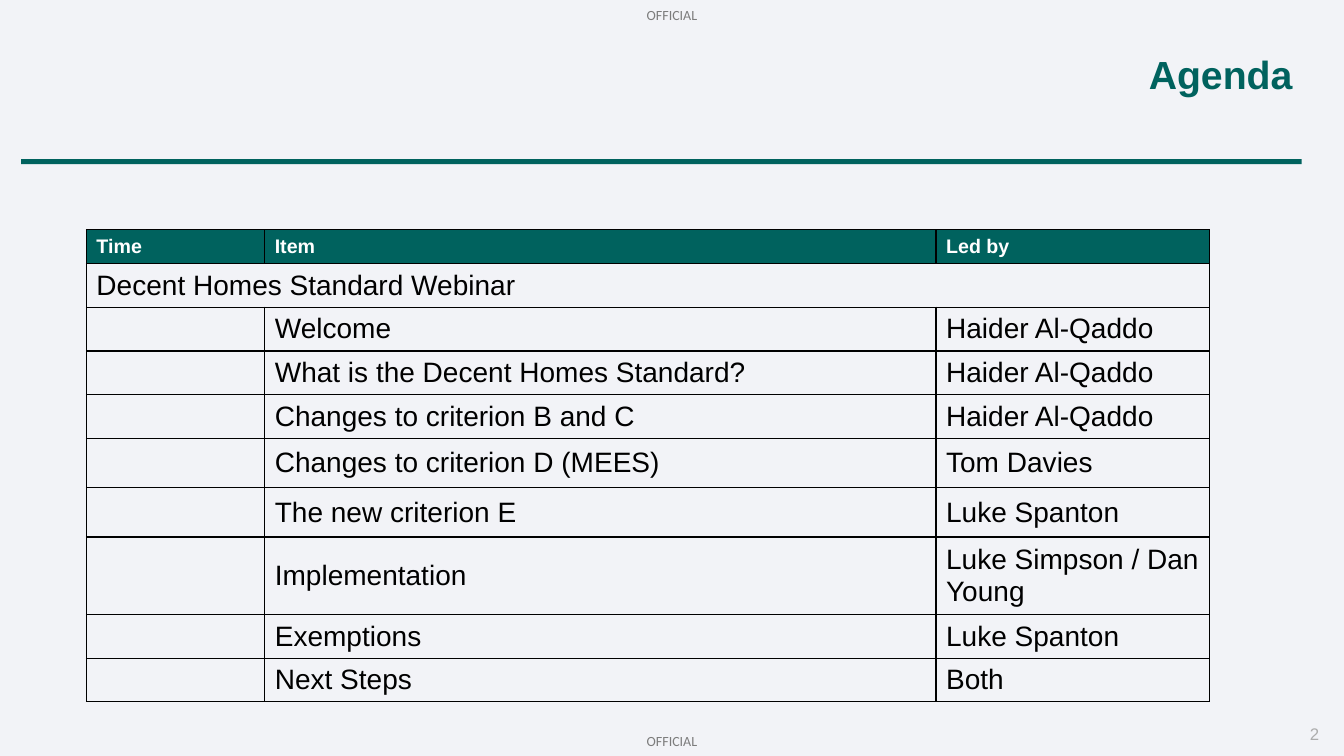
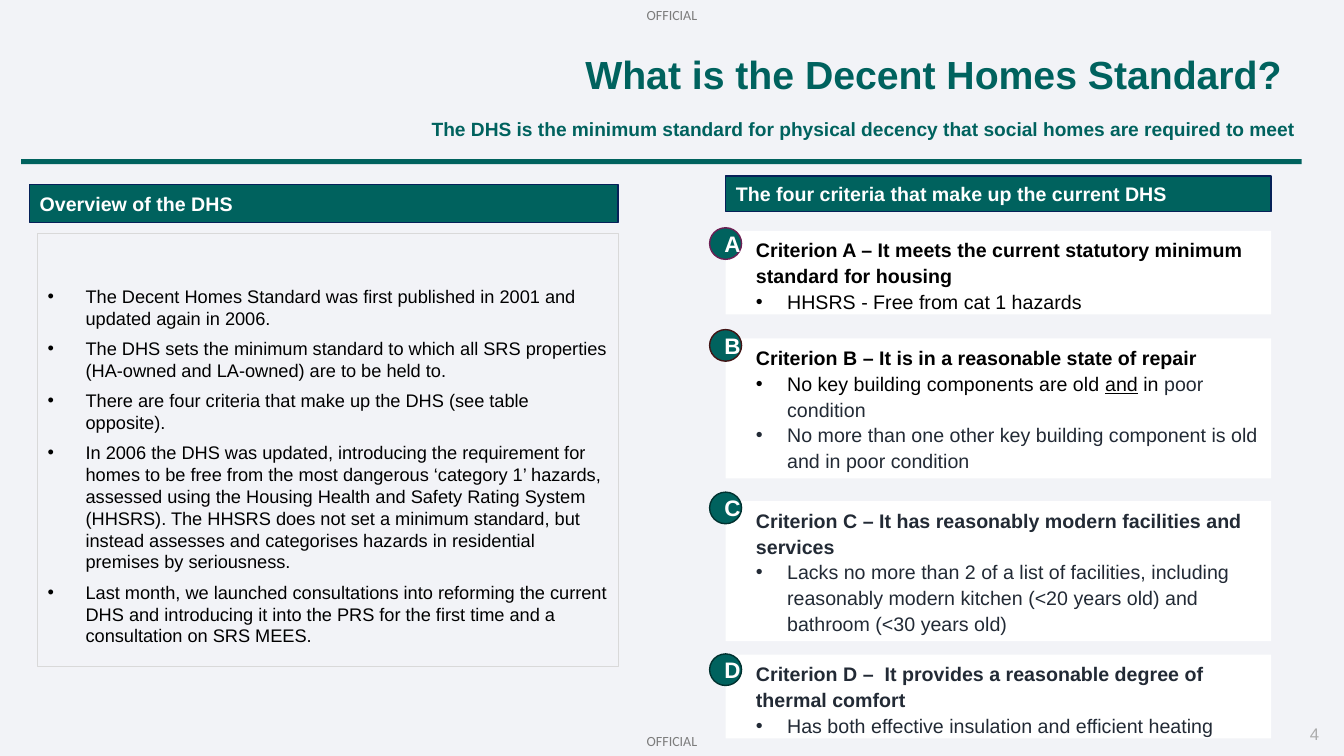
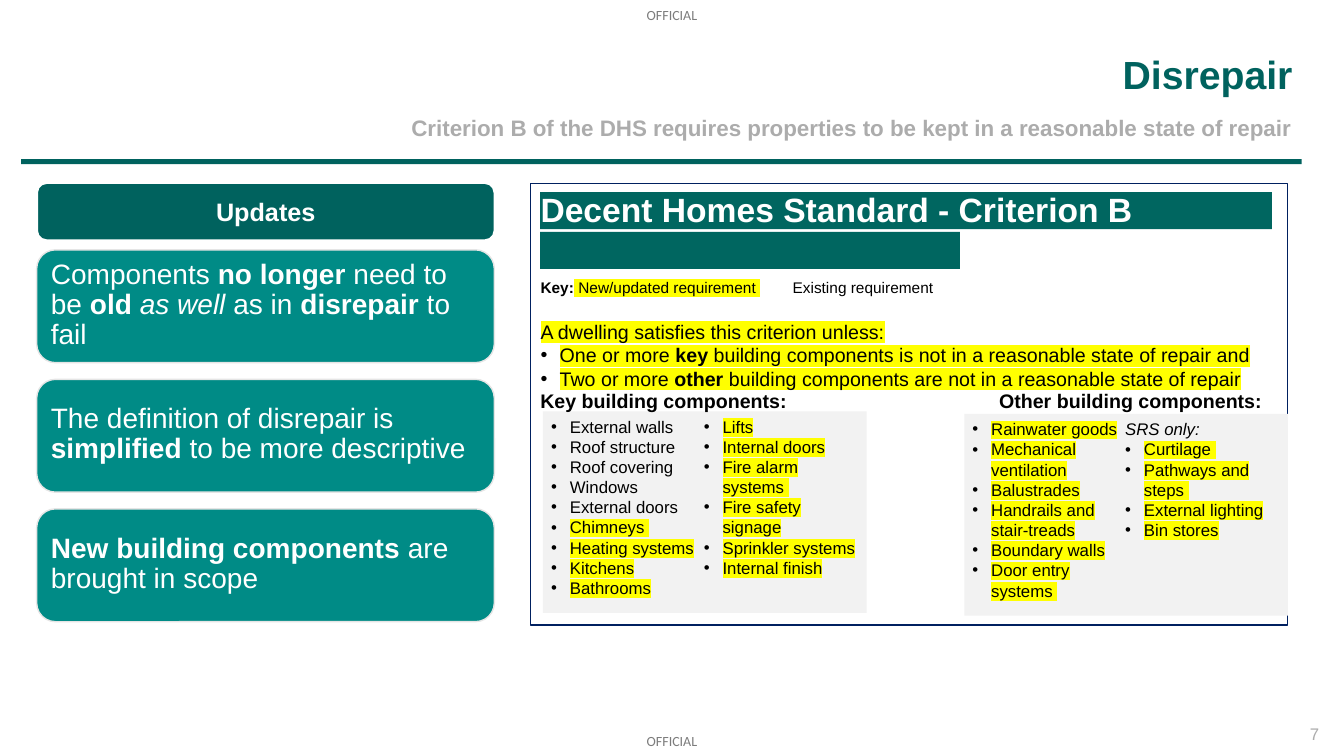
"""Build three slides on the Decent Homes Standard."""
import pptx
import pptx.util
import pptx.dml.color
import pptx.enum.shapes
import pptx.enum.text
import pptx.oxml.ns
import lxml.etree

rgb = pptx.dml.color.RGBColor.from_string
Pt = pptx.util.Pt
tag = pptx.oxml.ns.qn
sub = lxml.etree.SubElement
form = pptx.enum.shapes.MSO_SHAPE
side = pptx.enum.text.PP_ALIGN
hold = pptx.enum.text.MSO_ANCHOR

teal, sea, navy = "00625E", "008B86", "062158"
white, black, slate, gray, mark = "FFFFFF", "000000", "222A35", "ACACAC", "FFFF00"

deck = pptx.Presentation()
deck.slide_width = pptx.util.Inches(13.33)
deck.slide_height = pptx.util.Inches(7.5)
col, row = deck.slide_width / 100, deck.slide_height / 100


def box(page, area, kind=None, fill=None, line=None, inset=(0.75, 0.67), anchor=hold.TOP, wide=1):
    """Place a shape or text box by columns and rows, and return its text frame."""
    x, y, w, h = area
    place = [int(n) for n in (x * col, y * row, w * col, h * row)]
    if kind is None:
        shape = page.shapes.add_textbox(*place)
    else:
        shape = page.shapes.add_shape(kind, *place)
        shape.shadow.inherit = False
    if fill:
        shape.fill.solid()
        shape.fill.fore_color.rgb = rgb(fill)
    else:
        shape.fill.background()
    if line:
        shape.line.color.rgb = rgb(line)
        shape.line.width = Pt(wide)
    else:
        shape.line.fill.background()
    frame = shape.text_frame
    frame.word_wrap = True
    frame.vertical_anchor = anchor
    frame.margin_left = frame.margin_right = int(inset[0] * col)
    frame.margin_top = int(inset[1] * row)
    frame.margin_bottom = int(min(inset[1], 0.67) * row)
    return frame


def write(frame, paras, size, hue=black, align=side.LEFT, lead=1, after=0, face="Arial", tab=None):
    """Add paragraphs of (indent, hang, runs); run marks are b, i, u and h."""
    for left, hang, runs in paras:
        para = frame.paragraphs[0]
        if para.runs:
            para = frame.add_paragraph()
        prop = para._p.get_or_add_pPr()
        prop.set("marL", str(int(left * col)))
        prop.set("indent", str(int(-hang * col)))
        if hang:
            sub(prop, tag("a:buFont")).set("typeface", "Arial")
            sub(prop, tag("a:buChar")).set("char", "•")
        else:
            sub(prop, tag("a:buNone"))
        if tab:
            stop = sub(sub(prop, tag("a:tabLst")), tag("a:tab"))
            stop.set("pos", str(int(tab * col)))
            stop.set("algn", "l")
        para.alignment = align
        para.line_spacing = lead
        para.space_before = Pt(0)
        para.space_after = Pt(after)
        for text, marks, *tint in runs:
            run = para.add_run()
            run.text = text
            font = run.font
            font.size = Pt(size)
            font.bold = "b" in marks
            font.italic = "i" in marks
            font.underline = "u" in marks
            font.color.rgb = rgb(tint[0] if tint else hue)
            if "h" in marks:
                glow = sub(run._r.get_or_add_rPr(), tag("a:highlight"))
                sub(glow, tag("a:srgbClr")).set("val", mark)
            font.name = face


pages = []
for name, num, back in [
    ("Agenda", "2", "F2F3F7"),
    ("What is the Decent Homes Standard? ", "4", "F2F3F7"),
    ("Disrepair", "7", white),
]:
    page = deck.slides.add_slide(deck.slide_layouts[5])
    page.background.fill.solid()
    page.background.fill.fore_color.rgb = rgb(back)
    for y in (0.93, 96.87):
        label = box(page, (48.12, y, 4.5, 2.27), inset=(0, 0))
        write(label, [(0, 0, [("OFFICIAL", "")])], 10, "7C7C7C", face="Calibri")
    box(page, (1.57, 21.05, 95.28, 0.67), form.RECTANGLE, teal)
    label = box(page, (93.5, 95.73, 4.65, 2.67), inset=(0, 0), anchor=hold.MIDDLE)
    write(label, [(0, 0, [(num, "")])], 12, gray, side.RIGHT)
    title = page.shapes.title
    title.left, title.top = int(33.68 * col), int(7.33 * row)
    title.width, title.height = int(62.48 * col), int(5.6 * row)
    frame = title.text_frame
    frame.margin_left = frame.margin_right = frame.margin_top = frame.margin_bottom = 0
    frame.vertical_anchor = hold.BOTTOM
    frame.word_wrap = True
    frame.auto_size = pptx.enum.text.MSO_AUTO_SIZE.NONE
    write(frame, [(0, 0, [(name, "b")])], 28, teal, side.RIGHT, 0.9)
    pages.append(page)
first, second, third = pages

items = [
    ("Time", "Item", "Led by"),
    ("Decent Homes Standard Webinar", "", ""),
    ("", "Welcome", "Haider Al-Qaddo"),
    ("", "What is the Decent Homes Standard?", "Haider Al-Qaddo"),
    ("", "Changes to criterion B and C", "Haider Al-Qaddo"),
    ("", "Changes to criterion D (MEES)", "Tom Davies"),
    ("", "The new criterion E", "Luke Spanton"),
    ("", "Implementation", "Luke Simpson / Dan Young"),
    ("", "Exemptions", "Luke Spanton"),
    ("", "Next Steps", "Both"),
]
highs = [4.45, 5.73, 5.73, 5.73, 5.73, 6.53, 6.53, 10.13, 5.73, 5.73]
wides = [13.27, 49.95, 20.33]
grid = first.shapes.add_table(
    len(items), 3, int(6.43 * col), int(30.4 * row), int(sum(wides) * col), int(sum(highs) * row)
).table
for c, wide in enumerate(wides):
    grid.columns[c].width = int(wide * col)
for r, texts in enumerate(items):
    grid.rows[r].height = int(highs[r] * row)
    for c, text in enumerate(texts):
        cell = grid.cell(r, c)
        cell.vertical_anchor = hold.MIDDLE
        prop = cell._tc.get_or_add_tcPr()
        for edge in ("a:lnL", "a:lnR", "a:lnT", "a:lnB"):
            rule = sub(prop, tag(edge))
            rule.set("w", str(Pt(1)))
            sub(sub(rule, tag("a:solidFill")), tag("a:srgbClr")).set("val", black)
        if r == 0:
            cell.fill.solid()
            cell.fill.fore_color.rgb = rgb(teal)
        else:
            cell.fill.background()
        if text:
            size, hue, marks = (14, white, "b") if r == 0 else (20, black, "")
            write(cell.text_frame, [(0, 0, [(text, marks)])], size, hue)
grid.cell(1, 0).merge(grid.cell(1, 2))

lead = box(second, (20, 14.93, 76.75, 3.73), inset=(0, 0), anchor=hold.BOTTOM)
line = "The DHS is the minimum standard for physical decency that social homes are required to meet "
write(lead, [(0, 0, [(line, "b")])], 13.7, teal, side.RIGHT, 0.9)
for area, text in [
    ((2.2, 24.4, 43.8, 5.07), "Overview of the DHS"),
    ((54, 23.3, 40.58, 4.67), "The four criteria that make up the current DHS"),
]:
    head = box(second, area, form.RECTANGLE, teal, navy, anchor=hold.MIDDLE)
    write(head, [(0, 0, [(text, "b")])], 14, white)
facts = [
    "The Decent Homes Standard was first published in 2001 and updated again in 2006.",
    "The DHS sets the minimum standard to which all SRS properties (HA-owned and LA-owned) are to be held to.",
    "There are four criteria that make up the DHS (see table opposite).",
    "In 2006 the DHS was updated, introducing the requirement for homes to be free from the most dangerous "
    "‘category 1’ hazards, assessed using the Housing Health and Safety Rating System (HHSRS). The HHSRS does "
    "not set a minimum standard, but instead assesses and categorises hazards in residential premises by "
    "seriousness.",
    "Last month, we launched consultations into reforming the current DHS and introducing it into the PRS for "
    "the first time and a consultation on SRS MEES.",
]
body = box(second, (2.8, 30.9, 43.2, 57.3), form.RECTANGLE, None, "D9D9D9", (0.75, 6.8))
write(body, [(2.82, 2.82, [(fact, "")]) for fact in facts], 13, after=6)

cards = [
    ("A", 30.53, 11.07, 30.13, "6D1F54", black,
     "Criterion A – It meets the current statutory minimum standard for housing",
     [[("HHSRS - Free from cat 1 hazards", "")]]),
    ("B", 44.75, 18.53, 43.6, "421415", black,
     "Criterion B – It is in a reasonable state of repair",
     [[("No key building components are old ", ""), ("and", "u"), (" in ", ""), ("poor condition", "", slate)],
      [("No more than one other key building component is old and in poor condition", "", slate)]]),
    ("C", 66.3, 18.53, 65.1, "00312F", slate,
     "Criterion C – It has reasonably modern facilities and services",
     [[("Lacks no more than 2 of a list of facilities, including reasonably modern kitchen (<20 years old) "
        "and bathroom (<30 years old)", "")]]),
    ("D", 86.6, 11.07, 86.5, "00312F", slate,
     "Criterion D –  It provides a reasonable degree of thermal comfort",
     [[("Has both effective insulation and efficient heating", "")]]),
]
for key, y, high, top, edge, hue, head, notes in cards:
    card = box(second, (54, y, 40.58, high), form.RECTANGLE, white)
    write(card, [(1.5, 0, [(head, "b")])], 14, hue, lead=1.1)
    write(card, [(3.82, 2.32, runs) for runs in notes], 14, hue, lead=1.1)
    disc = box(second, (52.8, top, 2.38, 4.18), form.OVAL, teal, edge, anchor=hold.MIDDLE)
    write(disc, [(0, 0, [(key, "b")])], 16, white, side.CENTER)

lead = box(third, (1.55, 15.47, 94.57, 3.2), inset=(0, 0))
line = "Criterion B of the DHS requires properties to be kept in a reasonable state of repair"
write(lead, [(0, 0, [(line, "b")])], 16, gray, side.RIGHT, 0.9)
head = box(third, (2.75, 24.2, 34.05, 7.6), form.ROUNDED_RECTANGLE, teal, white, anchor=hold.MIDDLE, wide=1.5)
write(head, [(0, 0, [("Updates", "b")])], 18, white, side.CENTER)
news = [
    [("Components ", ""), ("no longer ", "b"), ("need to be ", ""), ("old ", "b"), ("as well", "i"),
     (" as in ", ""), ("disrepair", "b"), (" to fail", "")],
    [("The definition of disrepair is ", ""), ("simplified ", "b"), ("to be more descriptive", "")],
    [("New building components ", "b"), ("are brought in scope", "")],
]
for n, runs in enumerate(news):
    area = (2.73, 33.05 + n * 17.13, 34.05, 14.93)
    pill = box(third, area, form.ROUNDED_RECTANGLE, sea, "E5E5E5", (0.65, 0.5), hold.MIDDLE)
    pill.margin_bottom = int(0.75 * row)
    write(pill, [(0, 0, runs)], 20, white, lead=0.9)

for y, wide in [(25.4, 54.46), (30.69, 31.25)]:
    box(third, (40.18, y, wide, 4.9), form.RECTANGLE, "006660")
panel = box(third, (39.47, 24.27, 56.33, 58.4), form.RECTANGLE, None, "002060")
write(panel, [(0, 0, [("Decent Homes Standard - Criterion B", "b")])], 24, white, after=35)
keys = [("Key:", "b"), (" New/updated requirement ", "h"), ("\tExisting requirement", "")]
write(panel, [(0, 0, keys)], 11, after=16.5, tab=19.12)
write(panel, [
    (0, 0, [("A dwelling satisfies this criterion unless:", "h")]),
    (1.42, 1.42, [("One or more ", "h"), ("key", "bh"),
                  (" building components is not in a reasonable state of repair and", "h")]),
    (1.42, 1.42, [("Two or more ", "h"), ("other", "bh"),
                  (" building components are not in a reasonable state of repair", "h")]),
], 14)

olds = ["External walls", "Roof structure", "Roof covering", "Windows", "External doors"]
mains = ["Chimneys ", "Heating systems", "Kitchens", "Bathrooms", "Lifts", "Internal doors", "Fire alarm systems ",
         "Fire safety signage", "Sprinkler systems ", "Internal finish"]
rests = ["Rainwater goods", "Mechanical ventilation", "Balustrades", "Handrails and stair-treads",
         "Boundary walls", "Door entry systems "]
yards = ["Curtilage ", "Pathways and steps ", "External lighting", "Bin stores"]
lists = [
    (40.4, 54.4, 39.45, "Key building components:",
     [(1.4, 1.4, [(t, "")]) for t in olds] + [(1.4, 1.4, [(t, "h")]) for t in mains]),
    (71.75, 54.75, 73.58, "Other building components:",
     [(1.4, 1.4, [(t, "h")]) for t in rests] + [(0, 0, [("SRS only:", "i")])]
     + [(1.4, 1.4, [(t, "h")]) for t in yards]),
]
for x, y, left, text, paras in lists:
    parts = box(third, (x, y, 24.08, 26.67), form.RECTANGLE, "F2F2F2", inset=(0.6, 0.67))
    parts.margin_right = int(0.75 * col)
    parts._txBody.bodyPr.set("numCol", "2")
    write(parts, paras, 12)
    label = box(third, (left, 50.8, 22.2, 4.53))
    write(label, [(0, 0, [(text, "b")])], 14)

deck.save("out.pptx")
